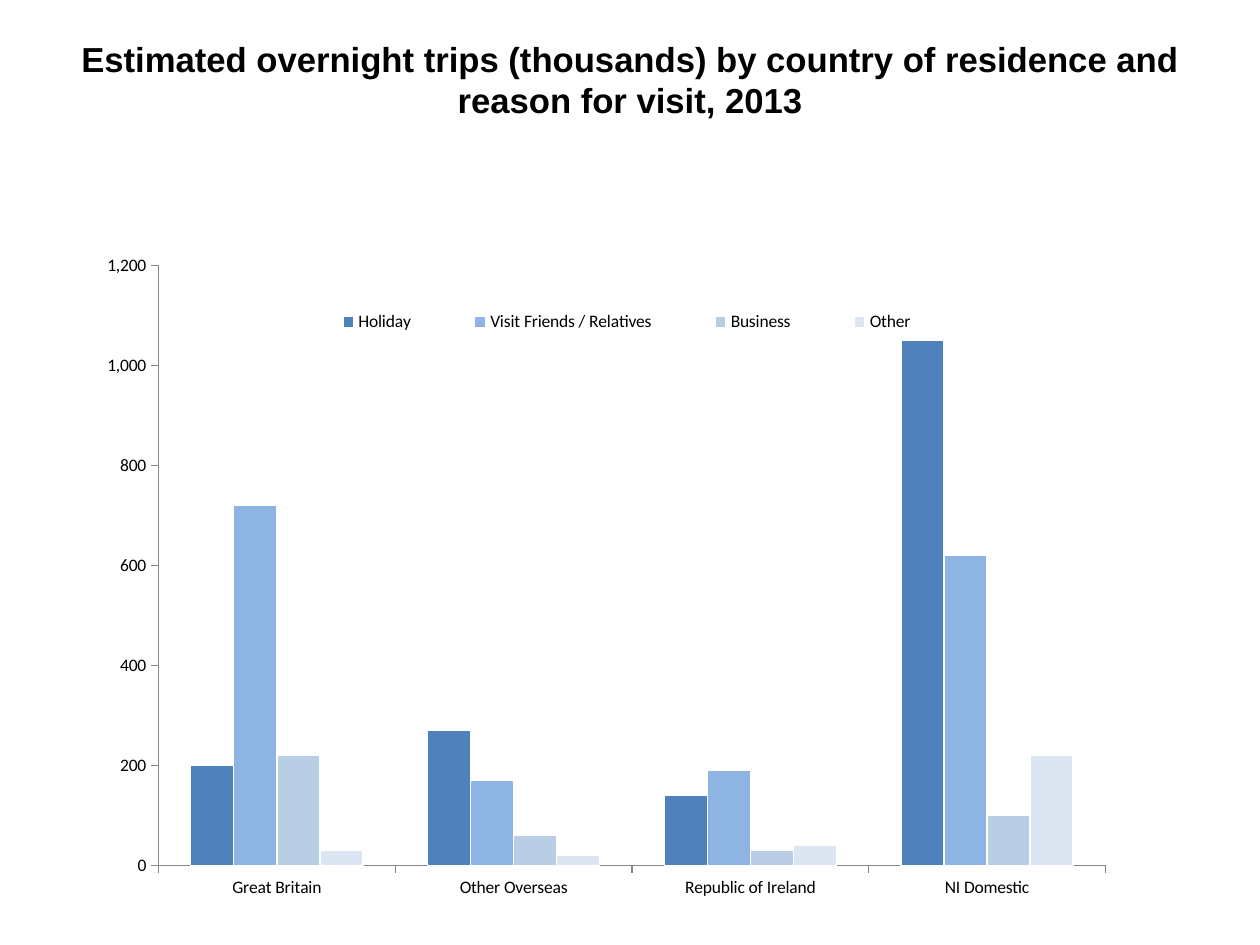
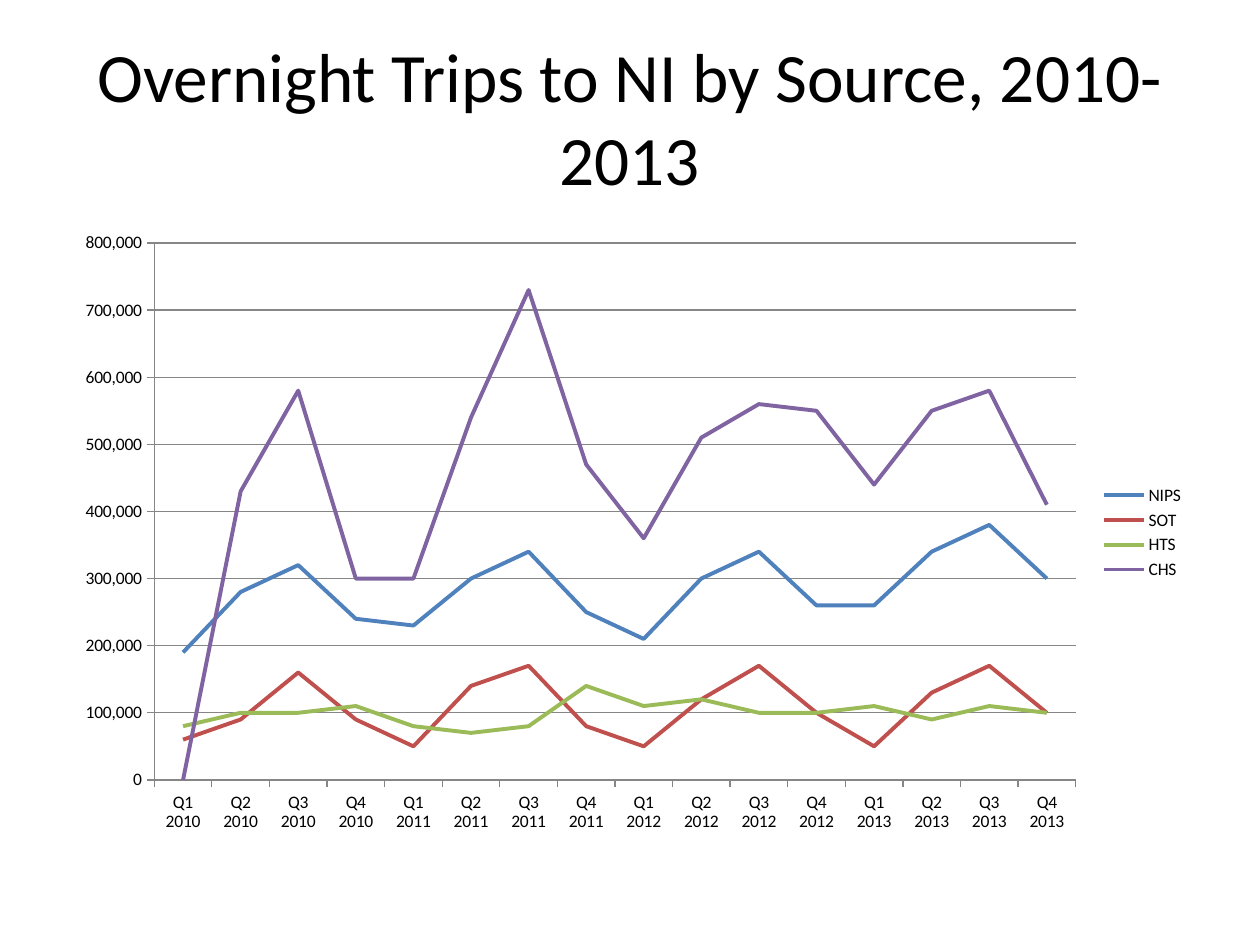
from dataclasses import dataclass
from typing import Optional

import pptx
import pptx.chart.data
import pptx.dml.color
import pptx.enum.chart
import pptx.enum.text
import pptx.oxml
import pptx.oxml.ns
import pptx.util

Cm = pptx.util.Cm
Pt = pptx.util.Pt
ChartType = pptx.enum.chart.XL_CHART_TYPE
LegendPosition = pptx.enum.chart.XL_LEGEND_POSITION
Anchor = pptx.enum.text.MSO_ANCHOR


@dataclass(frozen=True)
class Theme:
    text: str = "000000"
    axis: str = "868686"
    bar_edge: str = "FFFFFF"
    blues: tuple = ("4F81BD", "8EB4E3", "B9CDE5", "DCE6F2")
    accents: tuple = ("4F81BD", "C0504D", "9BBB59", "8064A2")
    body_font: str = "Calibri"
    heading_font: str = "Arial"
    title_size: float = 39.6
    heading_size: float = 19.8
    chart_size: float = 10
    axis_width: float = 0.75
    line_width: float = 2.25


THEME = Theme()


@dataclass(frozen=True)
class Area:
    """Left, top, width and height, in centimetres or as fractions of a chart."""
    left: float
    top: float
    width: float
    height: float

    def lengths(self) -> tuple:
        return Cm(self.left), Cm(self.top), Cm(self.width), Cm(self.height)


@dataclass(frozen=True)
class Title:
    text: str
    font: str
    size: float
    bold: bool
    anchor: Anchor


@dataclass(frozen=True)
class ChartSpec:
    kind: ChartType
    area: Area
    categories: list
    series: dict
    colors: tuple
    legend: LegendPosition
    gridlines: bool
    maximum: int
    step: int
    plot_layout: Optional[Area] = None
    legend_layout: Optional[Area] = None


TITLE_AREA = Area(1.27, 0.76, 22.86, 3.18)

TRIPS_TITLE = Title(
    "Estimated overnight trips (thousands) by country of residence and "
    "reason for visit, 2013",
    THEME.heading_font, THEME.heading_size, True, Anchor.TOP)
TRIPS_CHART = ChartSpec(
    kind=ChartType.COLUMN_CLUSTERED,
    area=Area(1.5, 5.08, 21.21, 13.44),
    categories=["Great Britain", "Other Overseas", "Republic of Ireland", "NI Domestic"],
    series={
        "Holiday": (200, 270, 140, 1050),
        "Visit Friends / Relatives": (720, 170, 190, 620),
        "Business": (220, 60, 30, 100),
        "Other": (30, 20, 40, 220),
    },
    colors=THEME.blues,
    legend=LegendPosition.BOTTOM,
    gridlines=False,
    maximum=1200,
    step=200,
    plot_layout=Area(0.08, 0.02, 0.9, 0.9),
    legend_layout=Area(0.2, 0.08, 0.65, 0.05),
)

SOURCE_TITLE = Title("Overnight Trips to NI by Source, 2010-2013",
                     THEME.body_font, THEME.title_size, False, Anchor.MIDDLE)
SOURCE_CHART = ChartSpec(
    kind=ChartType.LINE,
    area=Area(1.27, 4.45, 22.86, 12.57),
    categories=[f"Q{quarter} {year}" for year in range(2010, 2014) for quarter in range(1, 5)],
    series={
        "NIPS": (190000, 280000, 320000, 240000, 230000, 300000, 340000, 250000,
                 210000, 300000, 340000, 260000, 260000, 340000, 380000, 300000),
        "SOT": (60000, 90000, 160000, 90000, 50000, 140000, 170000, 80000,
                50000, 120000, 170000, 100000, 50000, 130000, 170000, 100000),
        "HTS": (80000, 100000, 100000, 110000, 80000, 70000, 80000, 140000,
                110000, 120000, 100000, 100000, 110000, 90000, 110000, 100000),
        "CHS": (0, 430000, 580000, 300000, 300000, 540000, 730000, 470000,
                360000, 510000, 560000, 550000, 440000, 550000, 580000, 410000),
    },
    colors=THEME.accents,
    legend=LegendPosition.RIGHT,
    gridlines=True,
    maximum=800000,
    step=100000,
)


def rgb(value: str) -> pptx.dml.color.RGBColor:
    return pptx.dml.color.RGBColor.from_string(value)


def style_line(line, color: str, width: float) -> None:
    line.color.rgb = rgb(color)
    line.width = Pt(width)


def set_layout(parent, index: int, area: Area, inner: bool = False) -> None:
    """Give a plot area or a legend a fixed place inside its chart."""
    for old in parent.findall(pptx.oxml.ns.qn("c:layout")):
        parent.remove(old)
    target = '<c:layoutTarget val="inner"/>' if inner else ""
    parent.insert(index, pptx.oxml.parse_xml(
        f'<c:layout {pptx.oxml.ns.nsdecls("c")}><c:manualLayout>{target}'
        '<c:xMode val="edge"/><c:yMode val="edge"/>'
        f'<c:x val="{area.left}"/><c:y val="{area.top}"/>'
        f'<c:w val="{area.width}"/><c:h val="{area.height}"/>'
        '</c:manualLayout></c:layout>'))


def fill_title(page, title: Title) -> None:
    box = page.shapes.title
    box.left, box.top, box.width, box.height = TITLE_AREA.lengths()
    frame = box.text_frame
    frame.text = title.text
    frame.word_wrap = True
    frame.auto_size = pptx.enum.text.MSO_AUTO_SIZE.NONE
    frame.vertical_anchor = title.anchor
    if title.anchor == Anchor.TOP:
        frame.margin_top = 0
    para = frame.paragraphs[0]
    para.alignment = pptx.enum.text.PP_ALIGN.CENTER
    span = para.runs[0]
    span.font.name = title.font
    span.font.size = Pt(title.size)
    span.font.bold = title.bold
    span.font.color.rgb = rgb(THEME.text)


def style_axes(chart, spec: ChartSpec) -> None:
    for axis in (chart.category_axis, chart.value_axis):
        axis.major_tick_mark = pptx.enum.chart.XL_TICK_MARK.OUTSIDE
        axis.minor_tick_mark = pptx.enum.chart.XL_TICK_MARK.NONE
        axis.has_major_gridlines = False
        style_line(axis.format.line, THEME.axis, THEME.axis_width)
    values = chart.value_axis
    values.minimum_scale, values.maximum_scale = 0, spec.maximum
    values.major_unit = spec.step
    values.tick_labels.number_format = "#,##0"
    values.tick_labels.number_format_is_linked = False
    if spec.gridlines:
        values.has_major_gridlines = True
        style_line(values.major_gridlines.format.line, THEME.axis, THEME.axis_width)


def style_series(chart, spec: ChartSpec) -> None:
    plot = chart.plots[0]
    plot.vary_by_categories = False
    is_line = spec.kind == ChartType.LINE
    if not is_line:
        plot.gap_width, plot.overlap = 150, 0
    for series, color in zip(plot.series, spec.colors):
        if is_line:
            series.smooth = False
            series.marker.style = pptx.enum.chart.XL_MARKER_STYLE.NONE
            style_line(series.format.line, color, THEME.line_width)
        else:
            series.format.fill.solid()
            series.format.fill.fore_color.rgb = rgb(color)
            style_line(series.format.line, THEME.bar_edge, THEME.axis_width)


def add_chart(page, spec: ChartSpec) -> None:
    data = pptx.chart.data.CategoryChartData(number_format="#,##0")
    data.categories = spec.categories
    for name, values in spec.series.items():
        data.add_series(name, values)
    chart = page.shapes.add_chart(spec.kind, *spec.area.lengths(), data).chart
    chart.has_title = False
    chart.font.name = THEME.body_font
    chart.font.size = Pt(THEME.chart_size)
    chart.font.color.rgb = rgb(THEME.text)
    style_axes(chart, spec)
    style_series(chart, spec)

    # Legend and fixed layouts
    chart.has_legend = True
    chart.legend.position = spec.legend
    chart.legend.include_in_layout = False
    if spec.plot_layout:
        set_layout(chart._chartSpace.xpath("c:chart/c:plotArea")[0], 0, spec.plot_layout, inner=True)
    if spec.legend_layout:
        set_layout(chart._chartSpace.xpath("c:chart/c:legend")[0], 1, spec.legend_layout)


def main() -> None:
    deck = pptx.Presentation()
    deck.slide_width, deck.slide_height = Cm(25.4), Cm(19.05)
    title_only = deck.slide_layouts.get_by_name("Title Only")
    for title, spec in ((TRIPS_TITLE, TRIPS_CHART), (SOURCE_TITLE, SOURCE_CHART)):
        page = deck.slides.add_slide(title_only)
        fill_title(page, title)
        add_chart(page, spec)
    deck.save("out.pptx")


if __name__ == "__main__":
    main()
